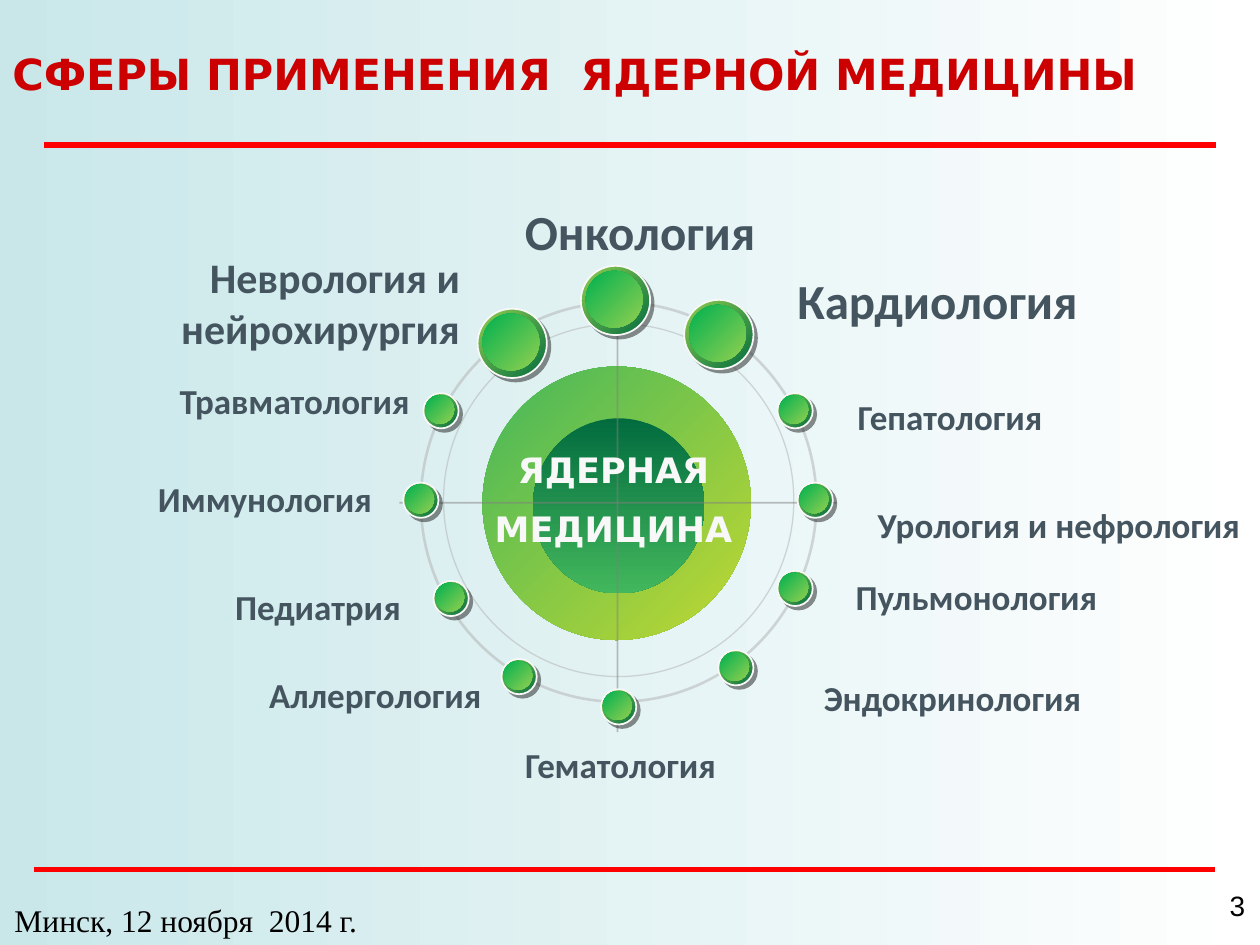
from lxml import etree
from pptx import Presentation
from pptx.dml.color import RGBColor
from pptx.enum.shapes import MSO_CONNECTOR, MSO_SHAPE
from pptx.enum.text import MSO_ANCHOR, PP_ALIGN
from pptx.oxml.ns import qn
from pptx.util import Inches, Pt

STRAIGHT = MSO_CONNECTOR.STRAIGHT
OVAL = MSO_SHAPE.OVAL
MIDDLE = MSO_ANCHOR.MIDDLE
TOP = MSO_ANCHOR.TOP
LEFT, CENTER, RIGHT = PP_ALIGN.LEFT, PP_ALIGN.CENTER, PP_ALIGN.RIGHT

WIDTH, HEIGHT = Inches(10), Inches(7.5)
COLUMN, ROW = WIDTH / 100, HEIGHT / 75

WHITE = RGBColor(0xFF, 0xFF, 0xFF)
OFF_WHITE = RGBColor(0xF8, 0xF8, 0xF8)
BLACK = RGBColor(0, 0, 0)
PALE_TEAL = RGBColor(0xC9, 0xE7, 0xE9)
RED = RGBColor(0xFF, 0, 0)
TITLE_RED = RGBColor(0xCC, 0, 0)
SLATE = RGBColor(0x45, 0x55, 0x60)
RING_GRAY = RGBColor(0xB2, 0xB2, 0xB2)
AXIS_GRAY = RGBColor(0x80, 0x80, 0x80)
SHADOW_GRAY = RGBColor(0x1C, 0x1C, 0x1C)
DARK_GREEN = RGBColor(0x02, 0x6C, 0x3F)
MID_GREEN = RGBColor(0x43, 0xB7, 0x5C)
BRIGHT_GREEN = RGBColor(0, 0xB0, 0x50)
LIGHT_GREEN = RGBColor(0x92, 0xD0, 0x50)
LIME = RGBColor(0xC2, 0xD8, 0x31)

RINGS = [(49.1, 39.7, 27.8, 28, 0.75), (49.1, 39.85, 31.4, 31.7, 1.5)]
DISCS = [
    (48.95, 39.95, 21.3, 21.7, (MID_GREEN, LIME), 45),
    (49.1, 40.15, 13.6, 13.9, (DARK_GREEN, MID_GREEN), 90),
]
AXES = [(31.7, 39.9, 66.4, 39.9), (49, 21.6, 49, 58.1)]
RULES = [(3.5, 11.5, 96.5, 11.5), (2.7, 69, 96.4, 69)]

LARGE_NODES = [(48.85, 23.85), (57.05, 26.55), (40.65, 27.25)]
SMALL_NODES = [
    (63.1, 32.6), (64.7, 39.7), (63.1, 46.7), (58.4, 53), (49.1, 56.1),
    (41.2, 53.7), (35.8, 47.5), (33.4, 39.7), (35, 32.6),
]
LARGE_SIZE, SMALL_SIZE, CORE_SHARE = 5.5, 2.8, 0.82

FIELDS = [
    ("Онкология", 39.4, 15.5, 22.8, 5.7, 28, CENTER),
    ("Кардиология", 60.2, 21, 28.4, 5.7, 28, CENTER),
    ("Гепатология", 66.35, 30.9, 18.1, 4.4, 20, CENTER),
    ("Урология и нефрология", 68.1, 39.5, 31.9, 4.4, 20, CENTER),
    ("Пульмонология", 65.6, 45.2, 23.8, 4.4, 20, CENTER),
    ("Эндокринология", 62.6, 53.2, 26, 4.4, 20, CENTER),
    ("Гематология", 39.8, 58.5, 18, 4.4, 20, RIGHT),
    ("Аллергология", 20.1, 53, 19.1, 4.4, 20, RIGHT),
    ("Педиатрия", 5.5, 46, 27.3, 4.4, 20, RIGHT),
    ("Иммунология", 4.7, 37.4, 25.8, 4.4, 20, RIGHT),
    ("Травматология", 6.2, 29.6, 27.3, 4.4, 20, RIGHT),
    ("Неврология и нейрохирургия", 10.2, 19.5, 27.3, 9.1, 24, RIGHT),
]


def place(column, row):
    return round(column * COLUMN), round(row * ROW)


def set_gradient(fill, colors, clockwise):
    fill.gradient()
    fill.gradient_angle = (360 - clockwise) % 360
    for stop, color, position in zip(fill.gradient_stops, colors, (0, 1)):
        stop.color.rgb = color
        stop.position = position


def add_alpha(color_parent, percent):
    color = color_parent.find(".//" + qn("a:srgbClr"))
    etree.SubElement(color, qn("a:alpha"), val=str(percent * 1000))


def add_shadow(effects, color, distance, percent):
    shadow = etree.SubElement(
        effects, qn("a:outerShdw"), blurRad="0", dist=str(Pt(distance)),
        dir="2700000", algn="ctr", rotWithShape="0")
    etree.SubElement(shadow, qn("a:srgbClr"), val=str(color))
    add_alpha(shadow, percent)


def set_line(line, color, width):
    line.color.rgb = color
    line.width = Pt(width)


def add_line(slide, ends, color, width, percent=100):
    connector = slide.shapes.add_connector(
        STRAIGHT, *place(*ends[:2]), *place(*ends[2:]))
    set_line(connector.line, color, width)
    properties = connector.element.spPr
    add_alpha(properties.find(qn("a:ln")), percent)
    etree.SubElement(properties, qn("a:effectLst"))


def add_ellipse(slide, column, row, width, height):
    ellipse = slide.shapes.add_shape(
        OVAL, *place(column - width / 2, row - height / 2),
        *place(width, height))
    ellipse.shadow.inherit = False
    return ellipse


def add_ring(slide, column, row, width, height, weight):
    ring = add_ellipse(slide, column, row, width, height)
    ring.fill.background()
    set_line(ring.line, RING_GRAY, weight)
    add_alpha(ring.element.spPr.find(qn("a:ln")), 50)


def add_disc(slide, column, row, width, height, colors, clockwise):
    disc = add_ellipse(slide, column, row, width, height)
    set_gradient(disc.fill, colors, clockwise)
    disc.line.fill.background()
    return disc


def add_node(slide, column, row, size):
    rim = add_disc(slide, column, row, size, size,
                   (LIGHT_GREEN, DARK_GREEN), 45)
    set_line(rim.line, OFF_WHITE, 1)
    add_shadow(rim.element.spPr.find(qn("a:effectLst")), SHADOW_GRAY, 2.8, 50)
    core = size * CORE_SHARE
    add_disc(slide, column - 0.1, row - 0.1, core, core,
             (BRIGHT_GREEN, LIGHT_GREEN), 45)


def add_text(slide, text, column, row, width, height, size, alignment,
             font="Calibri", color=SLATE, bold=True, anchor=TOP):
    box = slide.shapes.add_textbox(*place(column, row), *place(width, height))
    frame = box.text_frame
    frame.word_wrap = True
    frame.vertical_anchor = anchor
    frame.text = text
    for paragraph in frame.paragraphs:
        paragraph.alignment = alignment
        for run in paragraph.runs:
            run.font.name = font
            run.font.size = Pt(size)
            run.font.bold = bold
            run.font.color.rgb = color
    return frame


def add_title(slide):
    frame = add_text(slide, "СФЕРЫ ПРИМЕНЕНИЯ  ЯДЕРНОЙ МЕДИЦИНЫ",
                     0, 2.1, 92.5, 7, 24.5, LEFT,
                     "DejaVu Sans", TITLE_RED, anchor=MIDDLE)
    frame.paragraphs[0].line_spacing = 1.1
    frame.paragraphs[0].space_after = Pt(12)


def add_hub_text(slide):
    frame = add_text(slide, "ЯДЕРНАЯ\nМЕДИЦИНА", 37.7, 35.1, 22, 9.4, 20,
                     CENTER, "DejaVu Sans", OFF_WHITE)
    frame.paragraphs[1].space_before = Pt(10)
    for paragraph in frame.paragraphs:
        effects = etree.Element(qn("a:effectLst"))
        add_shadow(effects, SLATE, 2, 100)
        fill = paragraph.runs[0].font._element.find(qn("a:solidFill"))
        fill.addnext(effects)


def main():
    presentation = Presentation()
    presentation.slide_width, presentation.slide_height = WIDTH, HEIGHT
    slide = presentation.slides.add_slide(presentation.slide_layouts[6])
    set_gradient(slide.background.fill, (PALE_TEAL, WHITE), 0)
    for rule in RULES:
        add_line(slide, rule, RED, 3)
    inner_ring, outer_ring = RINGS
    add_ring(slide, *inner_ring)
    for disc in DISCS:
        add_disc(slide, *disc)
    add_ring(slide, *outer_ring)
    for axis in AXES:
        add_line(slide, axis, AXIS_GRAY, 1, 50)
    for field in FIELDS:
        add_text(slide, *field)
    add_hub_text(slide)
    for nodes, size in ((LARGE_NODES, LARGE_SIZE), (SMALL_NODES, SMALL_SIZE)):
        for column, row in nodes:
            add_node(slide, column, row, size)
    add_title(slide)
    add_text(slide, "3", 96.4, 70, 3.6, 3.7, 16, CENTER,
             "Arial", BLACK, False)
    add_text(slide, "Минск, 12 ноября  2014 г.", 0, 71, 29.5, 4, 18, CENTER,
             "Times New Roman", BLACK, False)
    presentation.save("out.pptx")


if __name__ == "__main__":
    main()
